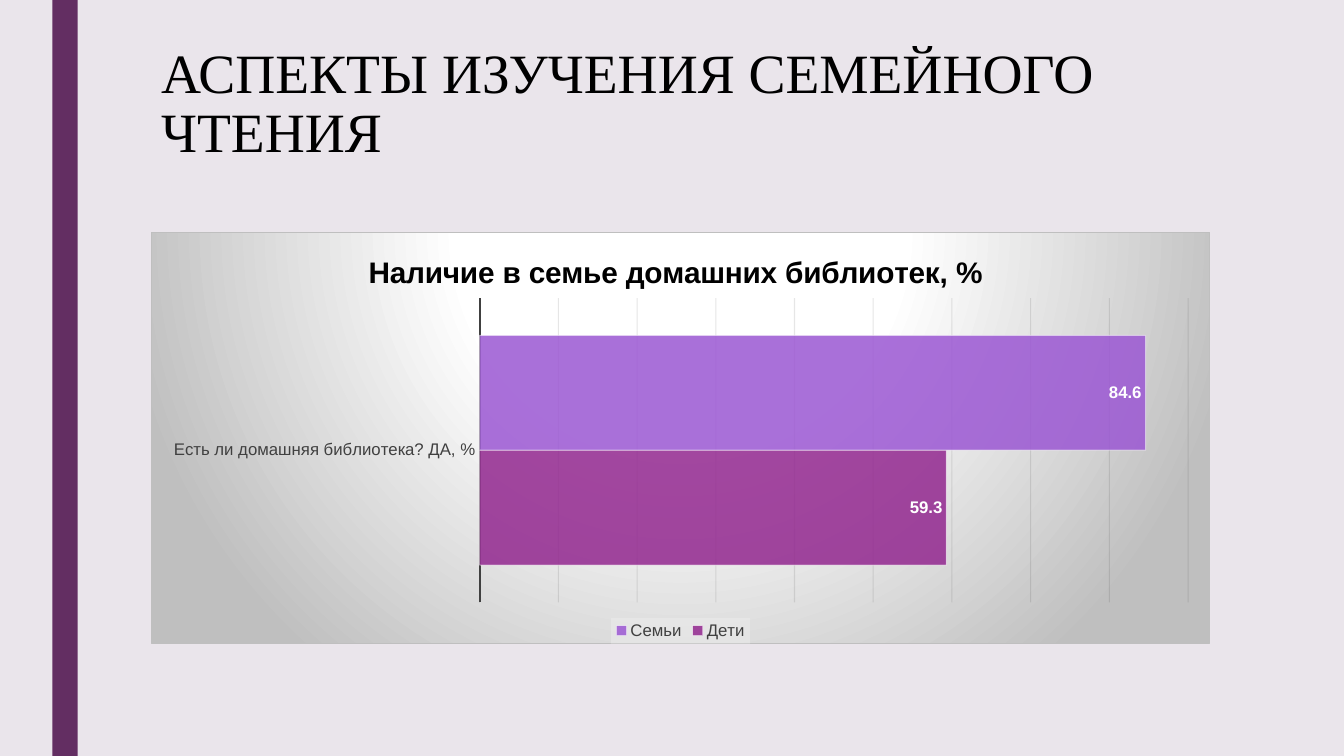
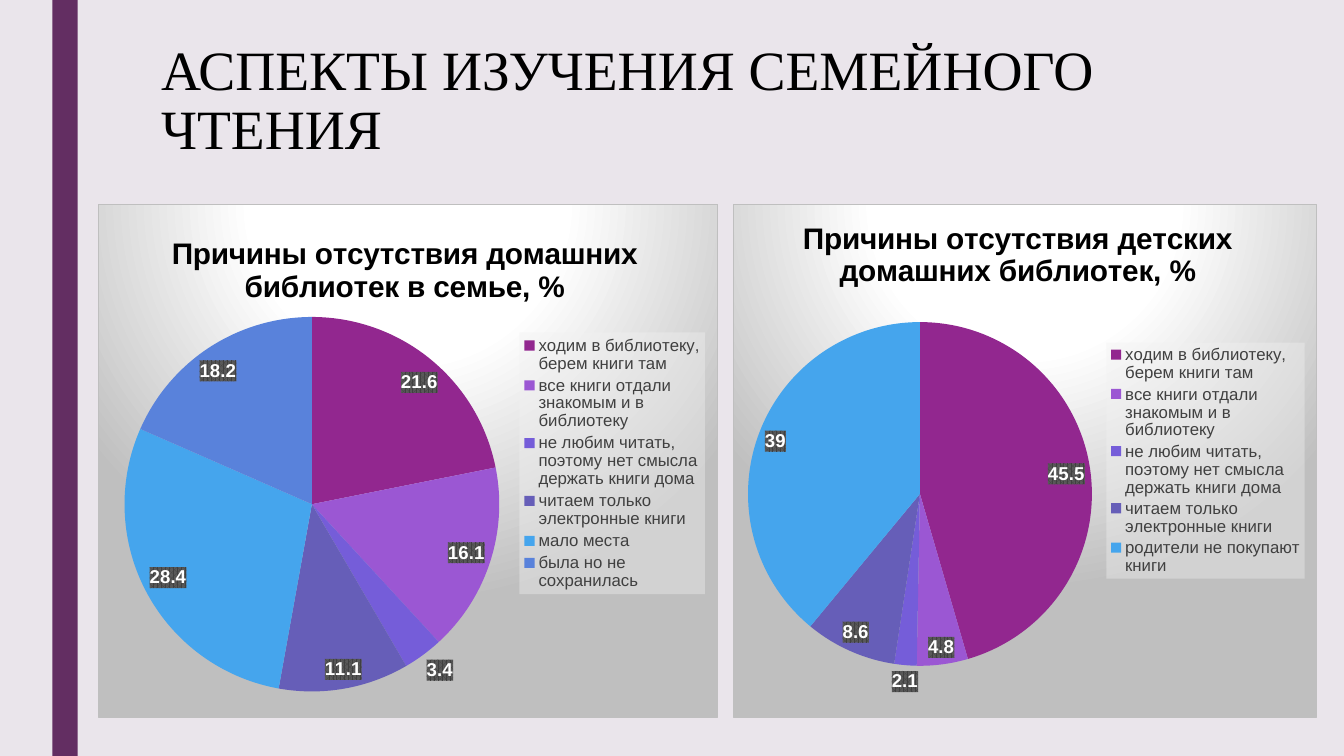
from pptx import Presentation
from pptx.chart.data import CategoryChartData
from pptx.dml.color import RGBColor
from pptx.enum.chart import XL_CHART_TYPE, XL_LABEL_POSITION, XL_LEGEND_POSITION, XL_TICK_MARK
from pptx.enum.shapes import MSO_SHAPE
from pptx.enum.text import MSO_ANCHOR
from pptx.oxml import parse_xml
from pptx.util import Inches, Pt

BAR, PIE = XL_CHART_TYPE.BAR_CLUSTERED, XL_CHART_TYPE.PIE
INSIDE_END, BEST_FIT = XL_LABEL_POSITION.INSIDE_END, XL_LABEL_POSITION.BEST_FIT
BOTTOM, RIGHT = XL_LEGEND_POSITION.BOTTOM, XL_LEGEND_POSITION.RIGHT
NO_TICKS = XL_TICK_MARK.NONE
RECTANGLE, TOP = MSO_SHAPE.RECTANGLE, MSO_ANCHOR.TOP

COLORS = {
    "background": "EAE5EB", "band": "632E62", "text": "000000", "muted": "404040",
    "white": "FFFFFF", "edge": "BFBFBF", "grid": "0D0D0D", "legend": "F2F2F2",
    "label_dots": "595959", "plum": "92278F", "violet": "9B57D3", "indigo": "755DD9",
    "slate": "665EB8", "sky": "45A5ED", "blue": "5982DB",
}
RGB = {name: RGBColor.from_string(value) for name, value in COLORS.items()}
SLICES = ["plum", "violet", "indigo", "slate", "sky", "blue"]
NAMESPACES = (
    'xmlns:c="http://schemas.openxmlformats.org/drawingml/2006/chart" '
    'xmlns:a="http://schemas.openxmlformats.org/drawingml/2006/main"'
)
HEADING = "АСПЕКТЫ ИЗУЧЕНИЯ СЕМЕЙНОГО ЧТЕНИЯ"

# Fills that python-pptx has no public method for
CHART_FILL = f"""<c:spPr {NAMESPACES}><a:gradFill><a:gsLst>
<a:gs pos="0"><a:srgbClr val="{COLORS['white']}"/></a:gs>
<a:gs pos="39000"><a:srgbClr val="{COLORS['white']}"/></a:gs>
<a:gs pos="100000"><a:srgbClr val="{COLORS['edge']}"/></a:gs></a:gsLst>
<a:path path="circle"><a:fillToRect l="50000" t="-80000" r="50000" b="180000"/></a:path>
</a:gradFill><a:ln w="9525"><a:solidFill><a:srgbClr val="{COLORS['edge']}"/></a:solidFill></a:ln></c:spPr>"""
LEGEND_FILL = f"""<c:spPr {NAMESPACES}><a:solidFill><a:srgbClr val="{COLORS['legend']}">
<a:alpha val="39000"/></a:srgbClr></a:solidFill></c:spPr>"""
LABEL_FILL = f"""<c:spPr {NAMESPACES}><a:pattFill prst="pct75">
<a:fgClr><a:srgbClr val="{COLORS['muted']}"/></a:fgClr>
<a:bgClr><a:srgbClr val="{COLORS['label_dots']}"/></a:bgClr></a:pattFill></c:spPr>"""
OPACITY = {
    "c:ser/c:spPr/a:solidFill/a:srgbClr": 85,
    "c:ser/c:spPr/a:ln//a:srgbClr": 50,
    "c:majorGridlines//a:srgbClr": 10,
}

# Layout numbers are fractions of the chart: left, top, width, height
PAGES = [
    {"title_box": (1.5, 0.41, 10.99, 1.18), "charts": [{
        "kind": BAR, "box": (1.5, 2.3, 10.5, 4.09),
        "title": "Наличие в семье домашних библиотек, %",
        "categories": ["Есть ли домашняя библиотека? ДА, %"],
        "series": {"Дети": [59.3], "Семьи": [84.6]},
        "layouts": {"c:title": (0.2, 0.04), "c:plotArea": (0.31, 0.16, 0.67, 0.74)},
    }]},
    {"title_box": (1.5, 0.38, 10.99, 1.2), "charts": [{
        "kind": PIE, "box": (7.27, 2.02, 5.79, 5.1),
        "title": "Причины отсутствия детских домашних библиотек, %",
        "categories": [
            "ходим в библиотеку, берем книги там", "все книги отдали знакомым и в библиотеку",
            "не любим читать, поэтому нет смысла держать книги дома",
            "читаем только электронные книги", "родители не покупают книги"],
        "series": {"Series 1": [45.5, 4.8, 2.1, 8.6, 39]},
        "layouts": {"c:title": (0.11, 0.02), "c:plotArea": (0.02, 0.23, 0.6, 0.67),
                    "c:legend": (0.64, 0.27, 0.34, 0.46)},
    }, {
        "kind": PIE, "box": (0.97, 2.02, 6.15, 5.1),
        "title": "Причины отсутствия домашних библиотек в семье, %",
        "categories": [
            "ходим в библиотеку, берем книги там", "все книги отдали знакомым и в библиотеку",
            "не любим читать, поэтому нет смысла держать книги дома",
            "читаем только электронные книги", "мало места", "была но не сохранилась"],
        "series": {"Series 1": [21.6, 16.1, 3.4, 11.1, 28.4, 18.2]},
        "layouts": {"c:title": (0.11, 0.05), "c:plotArea": (0.04, 0.22, 0.61, 0.73),
                    "c:legend": (0.68, 0.25, 0.3, 0.51)},
    }]},
]


def set_font(font, color, size, bold=False, name="Arial"):
    values = {"name": name, "size": Pt(size), "bold": bold}
    for key, value in values.items():
        setattr(font, key, value)
    font.color.rgb = RGB[color]


def set_layout(part, numbers):
    """Place a chart part by fractions of the chart area."""
    for old in part.xpath("c:layout"):
        part.remove(old)
    inner = '<c:layoutTarget val="inner"/>' if part.tag.endswith("plotArea") else ""
    modes = '<c:xMode val="edge"/><c:yMode val="edge"/>'
    sizes = "".join(f'<c:{key} val="{number}"/>' for key, number in zip("xywh", numbers))
    layout = parse_xml(f"<c:layout {NAMESPACES}><c:manualLayout>{inner}{modes}{sizes}"
                       "</c:manualLayout></c:layout>")
    part.insert(0 if inner else 1, layout)


deck = Presentation()
deck.slide_width, deck.slide_height = Inches(13.33), Inches(7.5)
background = deck.slide_master.background.fill
background.solid()
background.fore_color.rgb = RGB["background"]

for content in PAGES:
    page = deck.slides.add_slide(deck.slide_layouts[6])

    # Side band
    band = page.shapes.add_shape(RECTANGLE, Inches(0.52), 0, Inches(0.25), deck.slide_height)
    band.shadow.inherit = False
    band.fill.solid()
    band.fill.fore_color.rgb = RGB["band"]
    band.line.fill.background()

    # Heading
    box = page.shapes.add_textbox(*map(Inches, content["title_box"]))
    box.text_frame.word_wrap = True
    box.text_frame.vertical_anchor = TOP
    para = box.text_frame.paragraphs[0]
    para.line_spacing = 0.89
    span = para.add_run()
    span.text = HEADING
    set_font(span.font, "text", 39.6, name="Times New Roman")

    for item in content["charts"]:
        is_bar = item["kind"] == BAR

        # Chart and its values
        data = CategoryChartData()
        data.categories = item["categories"]
        for name, values in item["series"].items():
            data.add_series(name, values)
        chart = page.shapes.add_chart(item["kind"], *map(Inches, item["box"]), data).chart
        set_font(chart.font, "text", 10)
        root = chart.element
        root.xpath("c:txPr")[0].addprevious(parse_xml(CHART_FILL))

        # Chart title and legend
        chart.has_title = True
        chart.chart_title.include_in_layout = False
        para = chart.chart_title.text_frame.paragraphs[0]
        span = para.add_run()
        span.text = item["title"]
        set_font(span.font, "text", 21.3, bold=True)
        chart.has_legend = True
        chart.legend.position = BOTTOM if is_bar else RIGHT
        chart.legend.include_in_layout = False
        set_font(chart.legend.font, "muted", 12)
        root.xpath("c:chart/c:legend/c:txPr")[0].addprevious(parse_xml(LEGEND_FILL))

        # Series colours and value labels
        plot = chart.plots[0]
        plot.vary_by_categories = not is_bar
        for series, color in zip(plot.series, SLICES):
            labels = series.data_labels
            labels.show_value = True
            labels.position = INSIDE_END if is_bar else BEST_FIT
            set_font(labels.font, "white", 12 if is_bar else 13.3, bold=True)
            if is_bar:
                series.format.fill.solid()
                series.format.fill.fore_color.rgb = RGB[color]
                series.format.line.color.rgb = RGB["white"]
                series.format.line.width = Pt(0.75)
                continue
            for index, slice_color in enumerate(SLICES[:len(item["categories"])]):
                fill = series.points[index].format.fill
                fill.solid()
                fill.fore_color.rgb = RGB[slice_color]
            root.xpath(".//c:ser/c:dLbls/c:txPr")[0].addprevious(parse_xml(LABEL_FILL))

        # Axes of the bar chart
        if is_bar:
            plot.gap_width, plot.overlap = 65, 0
            category_axis, value_axis = chart.category_axis, chart.value_axis
            category_axis.major_tick_mark = NO_TICKS
            set_font(category_axis.tick_labels.font, "muted", 12)
            category_axis.format.line.color.rgb = RGB["muted"]
            category_axis.format.line.width = Pt(1.5)
            value_axis.minimum_scale, value_axis.maximum_scale = 0, 90
            value_axis.major_unit = 10
            value_axis.has_major_gridlines = True
            value_axis.major_gridlines.format.line.color.rgb = RGB["grid"]
            value_axis.major_gridlines.format.line.width = Pt(0.75)
            value_axis.visible = False

        # Transparency and placement
        for query, percent in OPACITY.items():
            for color in root.xpath(f".//{query}"):
                color.append(parse_xml(f'<a:alpha {NAMESPACES} val="{percent * 1000}"/>'))
        for tag, numbers in item["layouts"].items():
            set_layout(root.xpath(f"c:chart/{tag}")[0], numbers)

deck.save("out.pptx")
